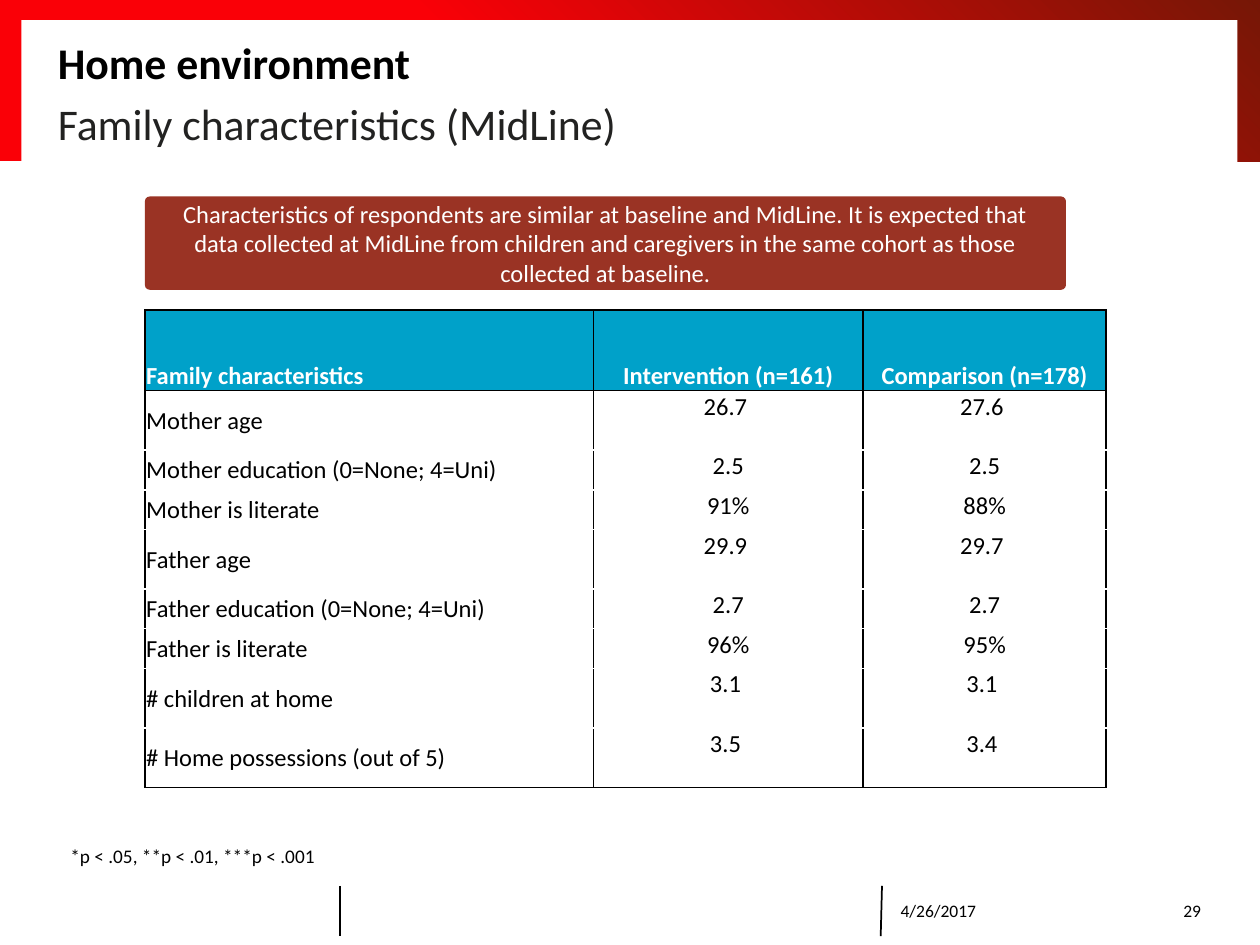
from lxml.etree import SubElement
from pptx import Presentation
from pptx.dml.color import RGBColor
from pptx.enum.shapes import MSO_CONNECTOR as Connector, MSO_SHAPE as Shape
from pptx.enum.text import MSO_ANCHOR as Anchor, MSO_AUTO_SIZE as AutoSize, PP_ALIGN as Align
from pptx.oxml.ns import qn
from pptx.util import Inches, Pt

BLACK, WHITE, GRAY = "000000", "FFFFFF", "222221"
RED, MAROON, BRICK, BLUE = "FA0007", "761706", "9A3324", "00A1C9"

HEADERS = ["Family characteristics", "Intervention (n=161)", "Comparison (n=178)"]
# Label, intervention, comparison, height in row units
ROWS = [
    ("Mother age", "26.7 ", "27.6 ", 3),
    ("Mother education (0=None; 4=Uni)", "2.5", "2.5", 2),
    ("Mother is literate", "91%", "88%", 2),
    ("Father age", "29.9 ", "29.7 ", 3),
    ("Father education (0=None; 4=Uni)", "2.7", "2.7", 2),
    ("Father is literate", "96%", "95%", 2),
    ("# children at home", "3.1 ", "3.1 ", 3),
    ("# Home possessions (out of 5)", "3.5 ", "3.4 ", 3),
]
CALLOUT = ("Characteristics of respondents are similar at baseline and MidLine. "
           "It is expected that data collected at MidLine from children and caregivers "
           "in the same cohort as those collected at baseline.")


def color(code):
    return RGBColor.from_string(code)


def lengths(box):
    return [Inches(value) for value in box]


def write(frame, text, size=14, ink=BLACK, bold=False, align=Align.LEFT, after=0):
    para = frame.paragraphs[0]
    para.alignment = align
    para.space_before, para.space_after = Pt(0), Pt(after)
    span = para.add_run()
    span.text = text
    font = span.font
    font.name, font.size, font.bold = "Calibri", Pt(size), bold
    font.color.rgb = color(ink)
    return para


def add_block(page, kind, box, fill):
    block = page.shapes.add_shape(kind, *lengths(box))
    block.shadow.inherit = False
    block.line.fill.background()
    if fill:
        block.fill.solid()
        block.fill.fore_color.rgb = color(fill)
    return block


def add_label(page, box, text, wrap=True, anchor=Anchor.MIDDLE, **style):
    frame = page.shapes.add_textbox(*lengths(box)).text_frame
    frame.word_wrap, frame.vertical_anchor = wrap, anchor
    if not wrap:
        frame.auto_size = AutoSize.SHAPE_TO_FIT_TEXT
    write(frame, text, **style)


def add_frame(page, box):
    """Gradient band with a white panel set into it."""
    left, top, width, height = box
    band = add_block(page, Shape.RECTANGLE, box, None)
    band.fill.gradient()
    band.fill.gradient_angle = 45
    for stop, place, code in zip(band.fill.gradient_stops, (0.4, 1), (RED, MAROON)):
        stop.position = place
        stop.color.rgb = color(code)
    panel = (left + 0.17, top + 0.16, width - 0.35, height - 0.1)
    add_block(page, Shape.RECTANGLE, panel, WHITE)


def fill_placeholder(page, holder, box, text, anchor, **style):
    holder.left, holder.top, holder.width, holder.height = lengths(box)
    frame = holder.text_frame
    frame.auto_size, frame.word_wrap = AutoSize.NONE, True
    frame.vertical_anchor = anchor
    frame.margin_left = frame.margin_right = frame.margin_top = frame.margin_bottom = 0
    para = write(frame, text, size=25, **style)
    page.shapes.element.append(holder.element)  # bring in front of the frame
    return para


def add_heading(page, box):
    left, top, width, height = box
    fill_placeholder(page, page.shapes.title, (left, top, width, 0.55),
                     "Home environment", Anchor.MIDDLE, bold=True)
    para = fill_placeholder(page, page.placeholders[1],
                            (left, top + 0.55, width, height - 0.55),
                            "Family characteristics (MidLine)", Anchor.TOP,
                            ink=GRAY, after=6)
    settings = para._p.get_or_add_pPr()
    settings.set("marL", "0")
    settings.set("indent", "0")
    SubElement(settings, qn("a:buNone"))


def add_callout(page, box):
    callout = add_block(page, Shape.ROUNDED_RECTANGLE, box, BRICK)
    callout.adjustments[0] = 0.05
    callout.text_frame.word_wrap = True
    callout.text_frame.vertical_anchor = Anchor.MIDDLE
    write(callout.text_frame, CALLOUT, ink=WHITE, align=Align.CENTER)


def set_borders(cell, sides):
    settings = cell._tc.get_or_add_tcPr()
    for position, side in enumerate(sides):
        line = settings.makeelement(qn(f"a:ln{side}"), {"w": str(Pt(1))})
        fill = SubElement(line, qn("a:solidFill"))
        SubElement(fill, qn("a:srgbClr"), val=BLACK)
        settings.insert(position, line)


def add_family_table(page, box):
    header_height = 0.64
    unit = (box[3] - header_height) / sum(row[-1] for row in ROWS)
    heights = [header_height] + [row[-1] * unit for row in ROWS]
    table = page.shapes.add_table(len(heights), len(HEADERS), *lengths(box)).table
    table.first_row = table.horz_banding = False
    for column, width in zip(table.columns, (3.56, 2.14, 1.93)):
        column.width = Inches(width)
    for row, height in zip(table.rows, heights):
        row.height = Inches(height)

    for r, texts in enumerate([HEADERS] + [row[:-1] for row in ROWS]):
        header = r == 0
        # Horizontal rules only around the header and below the last row
        sides = "LR" + ("T" if r <= 1 else "") + ("B" if r in (0, len(ROWS)) else "")
        for c, text in enumerate(texts):
            cell = table.cell(r, c)
            cell.margin_left = cell.margin_right = cell.margin_top = Inches(0.01)
            cell.margin_bottom = 0
            body_anchor = Anchor.TOP if c else Anchor.MIDDLE
            cell.vertical_anchor = Anchor.BOTTOM if header else body_anchor
            cell.fill.solid()
            cell.fill.fore_color.rgb = color(BLUE if header else WHITE)
            set_borders(cell, sides)
            write(cell.text_frame, text, ink=WHITE if header else BLACK, bold=header,
                  align=Align.CENTER if c else Align.LEFT)


def add_footer(page, box):
    left, top, width, height = box
    for start, end in ((2.7, 2.7), (7, 6.99)):
        rule = page.shapes.add_connector(
            Connector.STRAIGHT, *lengths((left + start, top, left + end, top + height)))
        rule.line.width = Pt(1)
        rule.line.color.rgb = color(BLACK)
        SubElement(rule._element.spPr, qn("a:effectLst"))
    add_label(page, (left + 7.05, top, 1.73, height), "4/26/2017", size=10)
    add_label(page, (left + 8.78, top, 0.85, height), "29", size=10, align=Align.RIGHT)


def main():
    deck = Presentation()
    deck.slide_width, deck.slide_height = Inches(10), Inches(7.5)
    page = deck.slides.add_slide(deck.slide_layouts[1])
    add_frame(page, (0, 0, 10, 1.28))
    add_heading(page, (0.46, 0.22, 9.06, 0.95))
    add_family_table(page, (1.15, 2.46, 7.63, 3.79))
    add_callout(page, (1.15, 1.56, 7.31, 0.74))
    add_label(page, (0.46, 6.65, 2.18, 0.29), "*p < .05, **p < .01, ***p < .001",
              wrap=False, anchor=Anchor.TOP, size=11)
    add_footer(page, (0, 7.03, 10, 0.4))
    deck.save("out.pptx")


if __name__ == "__main__":
    main()
